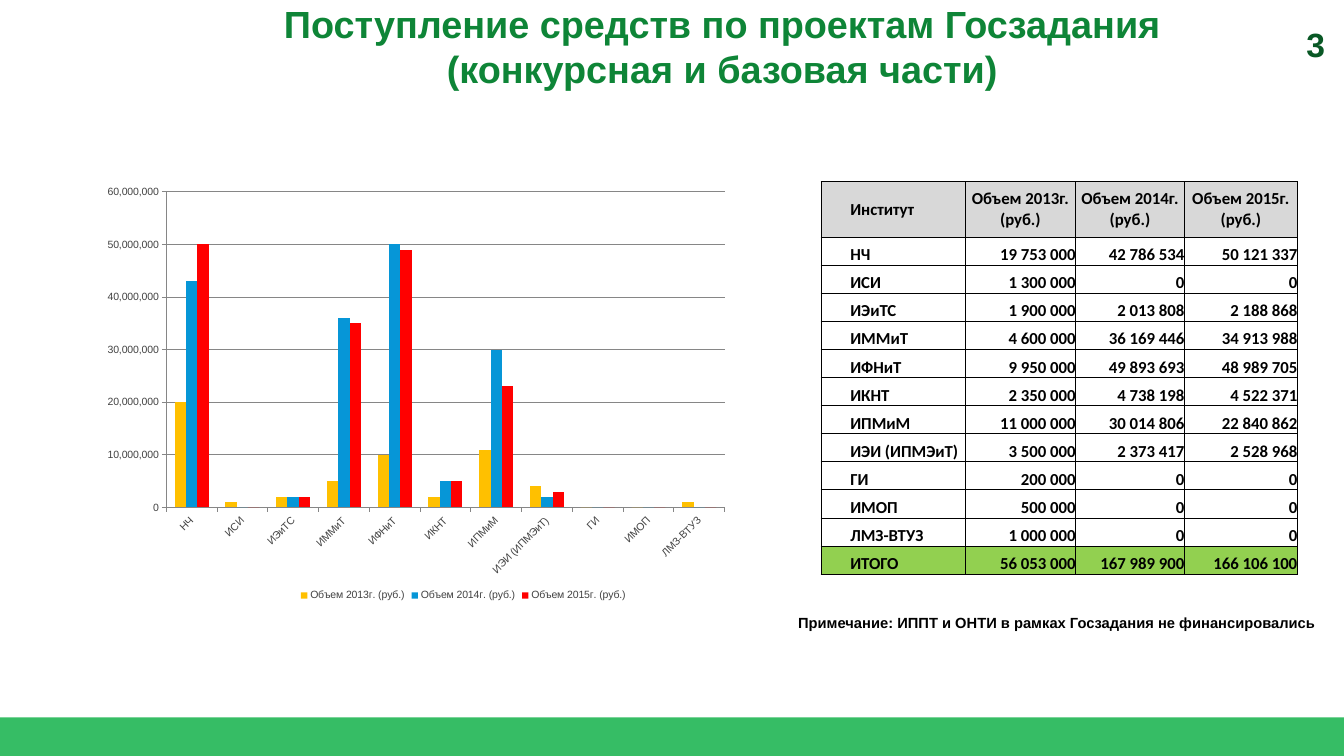
from dataclasses import dataclass

from lxml.etree import SubElement
from pptx import Presentation
from pptx.chart.data import CategoryChartData
from pptx.dml.color import RGBColor
from pptx.enum.chart import XL_CHART_TYPE, XL_LEGEND_POSITION, XL_TICK_MARK
from pptx.enum.shapes import MSO_SHAPE
from pptx.enum.text import MSO_ANCHOR, PP_ALIGN
from pptx.oxml import parse_xml
from pptx.oxml.ns import nsdecls, qn
from pptx.util import Emu, Inches, Pt

SLIDE_WIDTH, SLIDE_HEIGHT = Inches(17.78), Inches(10)
BLACK = RGBColor(0x00, 0x00, 0x00)
TITLE_GREEN = RGBColor(0x0E, 0x85, 0x37)
NUMBER_GREEN = RGBColor(0x09, 0x58, 0x25)
BAND_GREEN = RGBColor(0x36, 0xBD, 0x65)
TOTAL_GREEN = RGBColor(0x92, 0xD0, 0x50)
HEADER_GRAY = RGBColor(0xD8, 0xD8, 0xD8)
CHART_TEXT = RGBColor(0x42, 0x42, 0x42)
AXIS_GRAY = RGBColor(0x86, 0x86, 0x86)
SERIES_COLORS = (
    RGBColor(0xFF, 0xC0, 0x00), RGBColor(0x06, 0x96, 0xD7), RGBColor(0xFF, 0x00, 0x00))

YEARS = (2013, 2014, 2015)
YEAR_LABELS = [f"Объем {year}г. (руб.)" for year in YEARS]
COLUMN_SHARES = (10.74, 8.21, 8.1, 8.4)
HEADER_SHARE, ROW_SHARE = 7.4, 3.71


@dataclass(frozen=True)
class Area:
    """A rectangle in percent of the slide's width and height."""
    left: float
    top: float
    width: float
    height: float

    def lengths(self) -> tuple[Emu, Emu, Emu, Emu]:
        """Return left, top, width and height as lengths."""
        return across(self.left), down(self.top), across(self.width), down(self.height)


@dataclass(frozen=True)
class Institute:
    """Funding of one institute, one amount per year."""
    name: str
    amounts: tuple[int, int, int]


INSTITUTES = (
    Institute("НЧ", (19753000, 42786534, 50121337)),
    Institute("ИСИ", (1300000, 0, 0)),
    Institute("ИЭиТС", (1900000, 2013808, 2188868)),
    Institute("ИММиТ", (4600000, 36169446, 34913988)),
    Institute("ИФНиТ", (9950000, 49893693, 48989705)),
    Institute("ИКНТ", (2350000, 4738198, 4522371)),
    Institute("ИПМиМ", (11000000, 30014806, 22840862)),
    Institute("ИЭИ (ИПМЭиТ)", (3500000, 2373417, 2528968)),
    Institute("ГИ", (200000, 0, 0)),
    Institute("ИМОП", (500000, 0, 0)),
    Institute("ЛМЗ-ВТУЗ", (1000000, 0, 0)),
)
TOTAL = Institute("ИТОГО", (56053000, 167989900, 166106100))


def across(percent: float) -> Emu:
    """Return a share of the slide's width."""
    return Emu(round(SLIDE_WIDTH * percent / 100))


def down(percent: float) -> Emu:
    """Return a share of the slide's height."""
    return Emu(round(SLIDE_HEIGHT * percent / 100))


def format_font(font, size: float, color: RGBColor, name: str = "Arial", bold: bool = True) -> None:
    """Set name, size, weight and colour of a font."""
    font.name, font.size, font.bold = name, Pt(size), bold
    font.color.rgb = color


def add_band(slide, area: Area) -> None:
    """Draw the green band along the bottom edge."""
    band = slide.shapes.add_shape(MSO_SHAPE.RECTANGLE, *area.lengths())
    band.shadow.inherit = False
    band.fill.solid()
    band.fill.fore_color.rgb = BAND_GREEN
    band.line.fill.background()


def set_title(slide, area: Area, text: str) -> None:
    """Place and format the title placeholder."""
    title = slide.shapes.title
    title.left, title.top, title.width, title.height = area.lengths()
    frame = title.text_frame
    frame.text = text
    frame.vertical_anchor = MSO_ANCHOR.MIDDLE
    frame.margin_top = frame.margin_bottom = 0
    paragraph = frame.paragraphs[0]
    paragraph.alignment = PP_ALIGN.CENTER
    format_font(paragraph.font, 36, TITLE_GREEN)


def add_label(slide, area: Area, text: str, size: float, color: RGBColor,
              alignment: PP_ALIGN, wrap: bool) -> None:
    """Add a bold one-line text box."""
    frame = slide.shapes.add_textbox(*area.lengths()).text_frame
    frame.word_wrap = wrap
    paragraph = frame.paragraphs[0]
    paragraph.text = text
    paragraph.alignment = alignment
    format_font(paragraph.font, size, color)


def add_funding_chart(slide, area: Area) -> None:
    """Add the clustered columns of funding in whole millions by institute and year."""
    data = CategoryChartData(number_format="#,##0")
    data.categories = [institute.name for institute in INSTITUTES]
    for index, label in enumerate(YEAR_LABELS):
        data.add_series(label, [round(institute.amounts[index], -6) for institute in INSTITUTES])
    chart = slide.shapes.add_chart(
        XL_CHART_TYPE.COLUMN_CLUSTERED, *area.lengths(), data).chart
    format_font(chart.font, 10, CHART_TEXT, bold=False)
    chart.has_title = False
    chart.has_legend = True
    chart.legend.position = XL_LEGEND_POSITION.BOTTOM
    chart.legend.include_in_layout = False

    plot = chart.plots[0]
    plot.gap_width, plot.overlap, plot.vary_by_categories = 150, 0, False
    for series, color in zip(plot.series, SERIES_COLORS):
        series.format.fill.solid()
        series.format.fill.fore_color.rgb = color
        series.invert_if_negative = False

    value_axis, category_axis = chart.value_axis, chart.category_axis
    value_axis.minimum_scale, value_axis.maximum_scale = 0, 60000000
    value_axis.major_unit = 10000000
    value_axis.tick_labels.number_format = "#,##0"
    value_axis.tick_labels.number_format_is_linked = False
    value_axis.major_gridlines.format.line.color.rgb = AXIS_GRAY
    for axis in (value_axis, category_axis):
        axis.major_tick_mark = XL_TICK_MARK.OUTSIDE
        axis.format.line.color.rgb = AXIS_GRAY
        format_font(axis.tick_labels.font, 10, CHART_TEXT, bold=False)
    category_axis._element.find(f"{qn('c:txPr')}/{qn('a:bodyPr')}").set("rot", "-2700000")

    plot_area = chart._chartSpace.chart.plotArea
    for layout in plot_area.findall(qn("c:layout")):
        plot_area.remove(layout)
    layout = parse_xml(f"<c:layout {nsdecls('c')}><c:manualLayout/></c:layout>")
    settings = {"layoutTarget": "inner", "xMode": "edge", "yMode": "edge",
                "x": "0.153", "y": "0.051", "w": "0.652", "h": "0.726"}
    for tag, value in settings.items():
        SubElement(layout[0], qn(f"c:{tag}")).set("val", value)
    plot_area.insert(0, layout)


def fill_cell(cell, text: str, alignment: PP_ALIGN, anchor: MSO_ANCHOR,
              fill: RGBColor | None, indent: Emu) -> None:
    """Write one bordered table cell."""
    cell.margin_left = cell.margin_right = cell.margin_top = cell.margin_bottom = 0
    cell.vertical_anchor = anchor
    properties = cell._tc.get_or_add_tcPr()
    for side in ("lnL", "lnR", "lnT", "lnB"):
        properties.append(parse_xml(
            f'<a:{side} {nsdecls("a")} w="{Pt(0.5)}"><a:solidFill>'
            f'<a:srgbClr val="{BLACK}"/></a:solidFill></a:{side}>'))
    if fill is None:
        cell.fill.background()
    else:
        cell.fill.solid()
        cell.fill.fore_color.rgb = fill
    paragraph = cell.text_frame.paragraphs[0]
    paragraph.text = text
    paragraph.alignment = alignment
    paragraph._p.get_or_add_pPr().set("marL", str(int(indent)))
    format_font(paragraph.font, 16, BLACK, "Calibri")


def add_funding_table(slide, area: Area) -> None:
    """Add the table of amounts with its header and total rows."""
    rows = [["Институт", *YEAR_LABELS]]
    for institute in (*INSTITUTES, TOTAL):
        rows.append([institute.name,
                     *(f"{amount:,}".replace(",", " ") for amount in institute.amounts)])
    table = slide.shapes.add_table(len(rows), len(COLUMN_SHARES), *area.lengths()).table
    for column, share in zip(table.columns, COLUMN_SHARES):
        column.width = across(share)
    fills = {0: HEADER_GRAY, len(rows) - 1: TOTAL_GREEN}
    for row_index, texts in enumerate(rows):
        is_header = row_index == 0
        table.rows[row_index].height = down(HEADER_SHARE if is_header else ROW_SHARE)
        anchor = MSO_ANCHOR.MIDDLE if is_header else MSO_ANCHOR.BOTTOM
        amount_alignment = PP_ALIGN.CENTER if is_header else PP_ALIGN.RIGHT
        for column_index, text in enumerate(texts):
            is_name = column_index == 0
            fill_cell(table.cell(row_index, column_index), text,
                      PP_ALIGN.LEFT if is_name else amount_alignment, anchor,
                      fills.get(row_index), across(2.19 if is_name else 0))


def main() -> None:
    """Build and save the funding slide."""
    presentation = Presentation()
    presentation.slide_width, presentation.slide_height = SLIDE_WIDTH, SLIDE_HEIGHT
    slide = presentation.slides.add_slide(presentation.slide_layouts[5])
    add_band(slide, Area(0, 94.9, 100, 5.1))
    set_title(slide, Area(10.16, 0, 87.18, 12.2),
              "Поступление средств по проектам Госзадания\v(конкурсная и базовая части)")
    add_label(slide, Area(95.16, 2.7, 3.99, 6.4), "3", 32, NUMBER_GREEN, PP_ALIGN.RIGHT, True)
    add_funding_chart(slide, Area(2.62, 22.45, 63.72, 57.5))
    add_funding_table(slide, Area(61.08, 24, sum(COLUMN_SHARES), 52))
    add_label(slide, Area(58.83, 80.7, 39.99, 3.4),
              "Примечание: ИППТ и ОНТИ в рамках Госзадания не финансировались",
              14, BLACK, PP_ALIGN.LEFT, False)
    presentation.save("out.pptx")


if __name__ == "__main__":
    main()
